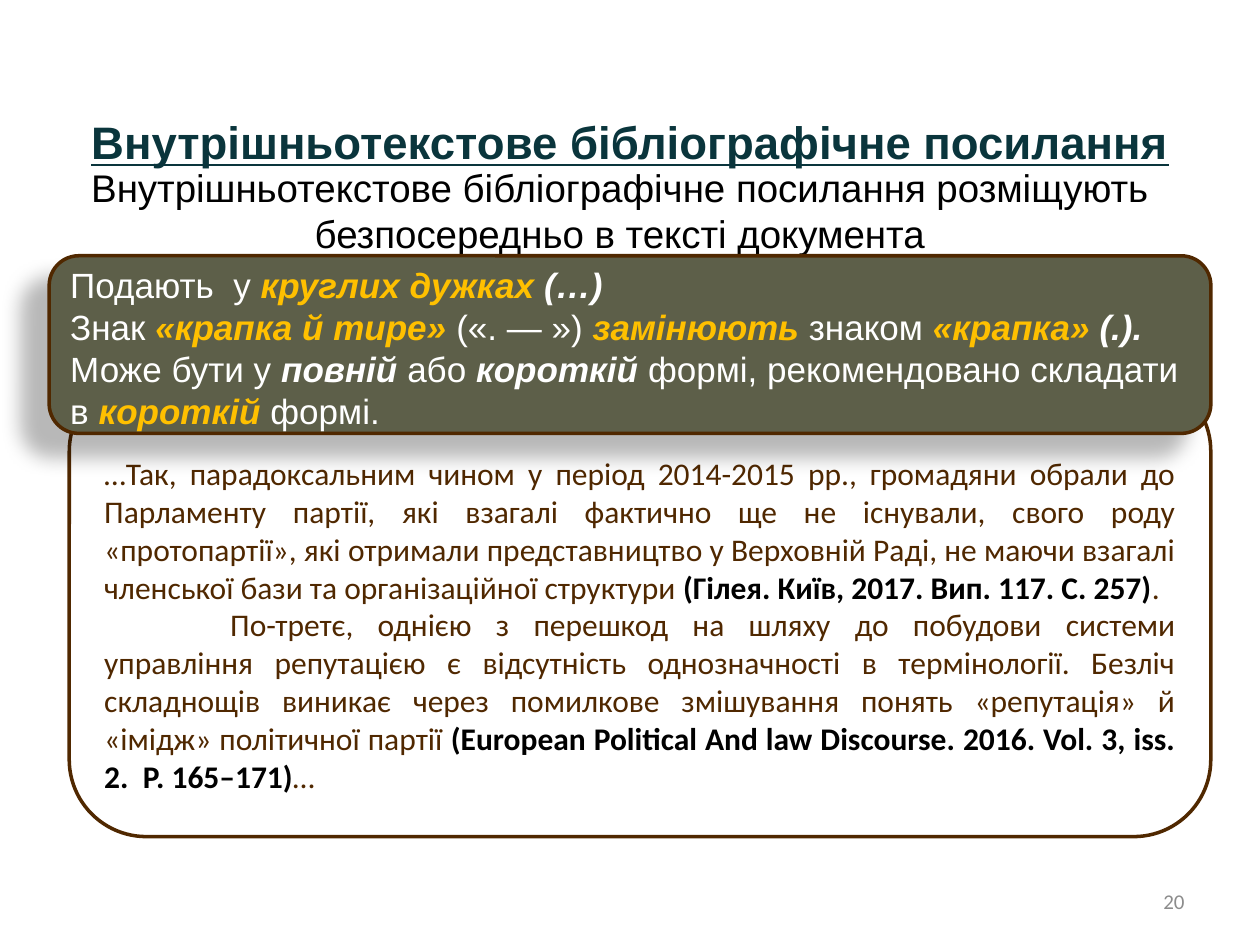
from lxml import etree
from pptx import Presentation
from pptx import util as u
from pptx.dml.color import RGBColor
from pptx.enum import shapes, text
from pptx.oxml import ns

BROWN = RGBColor(0x50, 0x28, 0x00)
OLIVE = RGBColor(0x5D, 0x5F, 0x49)
GOLD = RGBColor(0xFF, 0xC0, 0x00)
TEAL = RGBColor(0x0A, 0x35, 0x3C)
GRAY = RGBColor(0x8C, 0x8C, 0x8C)
WHITE = RGBColor(0xFF, 0xFF, 0xFF)
BLACK = RGBColor(0x00, 0x00, 0x00)
ALIGN = text.PP_ALIGN
MIDDLE = text.MSO_ANCHOR.MIDDLE

PLAIN = (WHITE, False, False)
STRONG = (WHITE, True, True)
GOLDEN = (GOLD, True, True)
BODY = (BROWN, False, False)
CITE = (BLACK, True, False)

RULES = [
    [("Подають  у ", PLAIN), ("круглих дужках ", GOLDEN), ("(…)", STRONG)],
    [("Знак ", PLAIN), ("«крапка й тире» ", GOLDEN), ("(«. — ») ", PLAIN),
     ("замінюють ", GOLDEN), ("знаком ", PLAIN), ("«крапка» ", GOLDEN),
     ("(.).", STRONG)],
    [("Може бути у ", PLAIN), ("повній ", STRONG), ("або ", PLAIN),
     ("короткій ", STRONG), ("формі, рекомендовано складати в ", PLAIN),
     ("короткій ", GOLDEN), ("формі.", PLAIN)],
]
QUOTES = [
    [("…Так, парадоксальним чином у період 2014-2015 рр., громадяни обрали "
      "до Парламенту партії, які взагалі фактично ще не існували, свого роду "
      "«протопартії», які отримали представництво у Верховній Раді, не маючи "
      "взагалі членської бази та організаційної структури ", BODY),
     ("(Гілея. Київ, 2017. Вип. 117. С. 257)", CITE), (". ", BODY)],
    [("По-третє, однією з перешкод на шляху до побудови системи управління "
      "репутацією є відсутність однозначності в термінології. Безліч "
      "складнощів виникає через помилкове змішування понять «репутація» й "
      "«імідж» політичної партії ", BODY),
     ("(European Political And law Discourse. 2016. Vol. 3, iss. 2.  "
      "P. 165–171)", CITE), ("…", BODY)],
]


class Deck:
    def __init__(self):
        self.prs = Presentation()
        self.prs.slide_width = u.Inches(10)
        self.prs.slide_height = u.Inches(7.5)
        self.slide = self.prs.slides.add_slide(self.prs.slide_layouts[5])

    def fill_text(self, frame, paras, font, size, align):
        frame.word_wrap = True
        for i, parts in enumerate(paras):
            para = frame.add_paragraph() if i else frame.paragraphs[0]
            para.alignment = align
            for words, (color, bold, italic) in parts:
                run = para.add_run()
                run.text = words
                run.font.name = font
                run.font.size = u.Pt(size)
                run.font.color.rgb = color
                run.font.bold = bold
                run.font.italic = italic

    def title(self, box, words):
        shape = self.slide.shapes.title
        shape.left, shape.top, shape.width, shape.height = map(u.Inches, box)
        frame = shape.text_frame
        frame.vertical_anchor = MIDDLE
        self.fill_text(frame, [[(words, (TEAL, True, False))]],
                       "Arial", 26, ALIGN.CENTER)
        frame.paragraphs[0].runs[0].font.underline = True

    def label(self, box, words, font, size, color, align, anchor):
        shape = self.slide.shapes.add_textbox(*map(u.Inches, box))
        shape.text_frame.vertical_anchor = anchor
        self.fill_text(shape.text_frame, [[(words, (color, False, False))]],
                       font, size, align)

    def panel(self, box, paras, fill, font, size, align, top):
        shape = self.slide.shapes.add_shape(
            shapes.MSO_SHAPE.ROUNDED_RECTANGLE, *map(u.Inches, box))
        shape.shadow.inherit = False
        shape.fill.solid()
        shape.fill.fore_color.rgb = fill
        shape.line.color.rgb = BROWN
        shape.line.width = u.Pt(2)
        frame = shape.text_frame
        frame.vertical_anchor = MIDDLE
        frame.margin_top = u.Inches(top)
        self.fill_text(frame, paras, font, size, align)
        return shape

    def indent(self, para, size):
        para._p.get_or_add_pPr().set("indent", str(u.Inches(size)))

    def shade(self, shape):
        effects = shape._element.spPr.find(ns.qn("a:effectLst"))
        cast = etree.SubElement(
            effects, ns.qn("a:outerShdw"), blurRad=str(u.Pt(11.8)),
            dist=str(u.Pt(19.7)), dir=str(141 * 60000),
            algn="ctr", rotWithShape="0")
        tint = etree.SubElement(cast, ns.qn("a:srgbClr"), val=str(BLACK))
        etree.SubElement(tint, ns.qn("a:alpha"), val="28000")


def main():
    deck = Deck()
    quote = deck.panel((0.55, 2.97, 9.06, 3.67), QUOTES, WHITE,
                       "Calibri", 18, ALIGN.JUSTIFY, 0.35)
    deck.indent(quote.text_frame.paragraphs[1], 1)
    deck.title((0.5, 0.7, 9, 0.85),
               "Внутрішньотекстове бібліографічне посилання")
    deck.label((7.17, 6.95, 2.33, 0.4), "20", "Calibri", 12, GRAY,
               ALIGN.RIGHT, MIDDLE)
    deck.label((0.39, 1.25, 9.06, 0.84),
               "Внутрішньотекстове бібліографічне посилання розміщують "
               "безпосередньо в тексті документа",
               "Arial", 22, BLACK, ALIGN.CENTER, text.MSO_ANCHOR.TOP)
    rules = deck.panel((0.39, 2.03, 9.22, 1.41), RULES, OLIVE,
                       "Arial", 20, ALIGN.LEFT, 0.1)
    deck.shade(rules)
    deck.prs.save("out.pptx")


if __name__ == "__main__":
    main()
